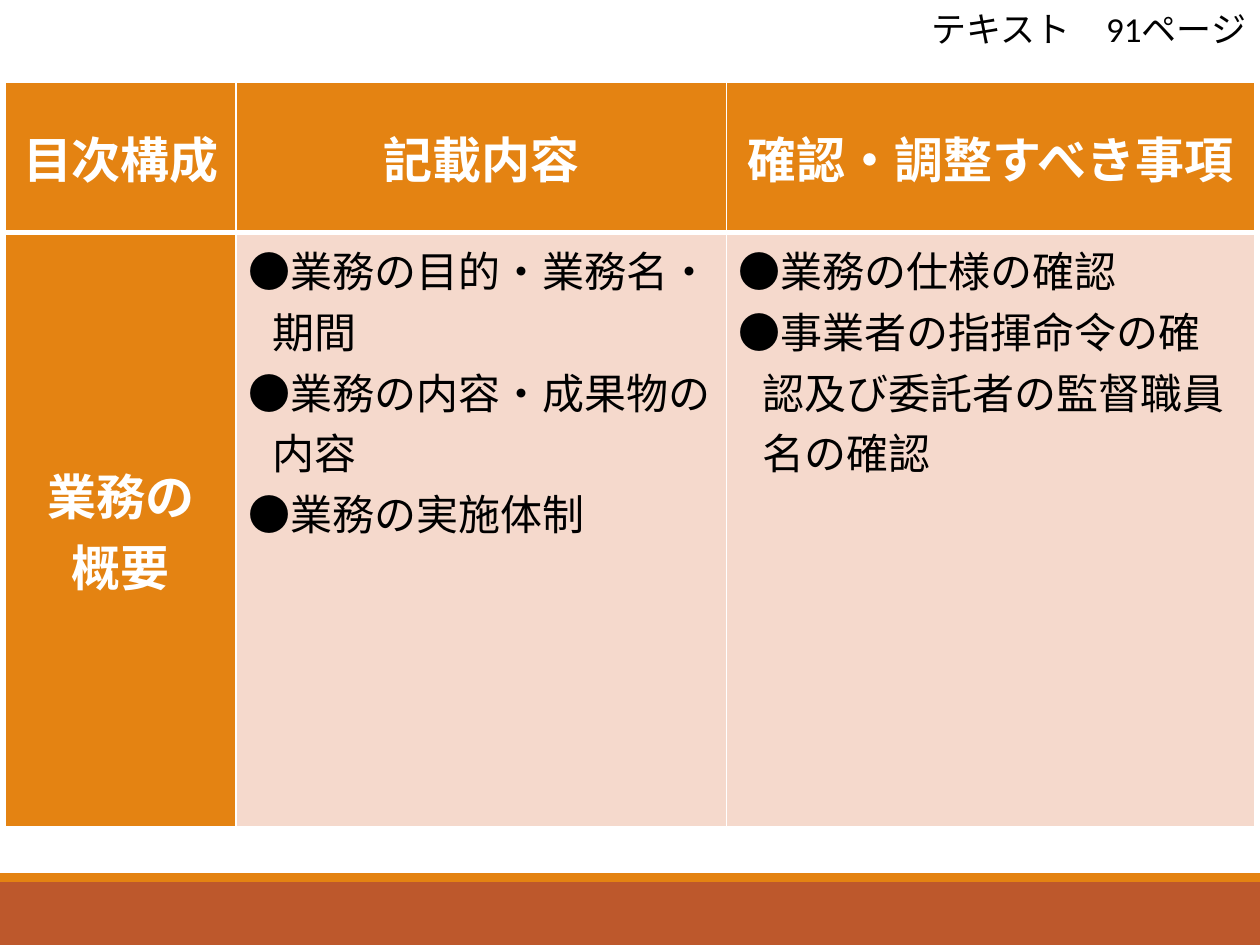
import pptx
import pptx.util
import pptx.dml.color
import pptx.enum.shapes
import pptx.enum.text
import pptx.oxml
import pptx.oxml.ns

Pt = pptx.util.Pt
RGBColor = pptx.dml.color.RGBColor
ALIGN = pptx.enum.text.PP_ALIGN
ANCHOR = pptx.enum.text.MSO_ANCHOR

WHITE = RGBColor(0xFF, 0xFF, 0xFF)
BLACK = RGBColor(0, 0, 0)
ORANGE = RGBColor(0xE4, 0x83, 0x12)
RUST = RGBColor(0xBD, 0x58, 0x2C)
PINK = RGBColor(0xF5, 0xD9, 0xCC)
CJK = "Noto Sans CJK JP"
SPACE = pptx.oxml.ns.nsdecls("a")

COLS = (131.8, 280.1, 301.7)
ROWS = (85.7, 339.8)
CELLS = (
    ("目次構成", "記載内容", "確認・調整すべき事項"),
    (
        "業務の\n概要",
        "業務の目的・業務名・期間\n業務の内容・成果物の内容\n業務の実施体制",
        "業務の仕様の確認\n事業者の指揮命令の確認及び委託者の監督職員名の確認",
    ),
)


def node(xml):
    return pptx.oxml.parse_xml(xml)


def style(para, size, color, bold, align, latin=CJK):
    para.alignment = align
    for run in para.runs:
        font = run.font
        font.size, font.bold, font.name = Pt(size), bold, latin
        font.color.rgb = color
        face = font._element.find(pptx.oxml.ns.qn("a:latin"))
        face.addnext(node(f'<a:ea {SPACE} typeface="{CJK}"/>'))


def bullet(para):
    props = para._p.get_or_add_pPr()
    props.set("marL", str(Pt(13.5)))
    props.set("indent", str(Pt(-13.5)))
    props.append(node(f'<a:buFont {SPACE} typeface="{CJK}"/>'))
    props.append(node(f'<a:buChar {SPACE} char="●"/>'))


def border(cell, top, bottom):
    props = cell._tc.get_or_add_tcPr()
    sides = (("L", 1), ("R", 1), ("T", top), ("B", bottom))
    for spot, (side, width) in enumerate(sides):
        props.insert(spot, node(
            f'<a:ln{side} {SPACE} w="{Pt(width)}"><a:solidFill>'
            f'<a:srgbClr val="{WHITE}"/></a:solidFill></a:ln{side}>'))


def fill_cell(cell, text, head):
    cell.text_frame.text = text
    cell.vertical_anchor = ANCHOR.MIDDLE if head else ANCHOR.TOP
    cell.fill.solid()
    cell.fill.fore_color.rgb = ORANGE if head else PINK
    for para in cell.text_frame.paragraphs:
        if head:
            style(para, 28, WHITE, True, ALIGN.CENTER)
        else:
            style(para, 24, BLACK, False, ALIGN.LEFT)
            bullet(para)


def add_grid(slide, left, top):
    frame = slide.shapes.add_table(
        len(ROWS), len(COLS), Pt(left), Pt(top), Pt(sum(COLS)), Pt(sum(ROWS)))
    table = frame.table
    for col, width in zip(table.columns, COLS):
        col.width = Pt(width)
    for y, (height, texts) in enumerate(zip(ROWS, CELLS)):
        table.rows[y].height = Pt(height)
        for x, text in enumerate(texts):
            cell = table.cell(y, x)
            fill_cell(cell, text, y == 0 or x == 0)
            border(cell, 3 if y else 1, 1 if y else 3)


def add_foot(slide, left, top, width, height):
    strip = 5
    bands = ((top + strip, height - strip, RUST), (top, strip, ORANGE))
    for y, tall, color in bands:
        band = slide.shapes.add_shape(
            pptx.enum.shapes.MSO_SHAPE.RECTANGLE,
            Pt(left), Pt(y), Pt(width), Pt(tall))
        band.shadow.inherit = False
        band.fill.solid()
        band.fill.fore_color.rgb = color
        band.line.fill.background()


def add_page(slide, left, top, width, height):
    box = slide.shapes.add_textbox(Pt(left), Pt(top), Pt(width), Pt(height))
    frame = box.text_frame
    frame.word_wrap = True
    frame.auto_size = pptx.enum.text.MSO_AUTO_SIZE.SHAPE_TO_FIT_TEXT
    frame.text = "テキスト　91ページ"
    style(frame.paragraphs[0], 20, BLACK, False, ALIGN.RIGHT, "Calibri")


def main():
    deck = pptx.Presentation()
    deck.slide_width, deck.slide_height = Pt(720), Pt(540)
    slide = deck.slides.add_slide(deck.slide_layouts[6])
    add_foot(slide, 0, 499, 720, 41)
    add_grid(slide, 3.2, 47)
    add_page(slide, 494.6, 0.7, 224.6, 31.5)
    deck.save("out.pptx")


if __name__ == "__main__":
    main()
